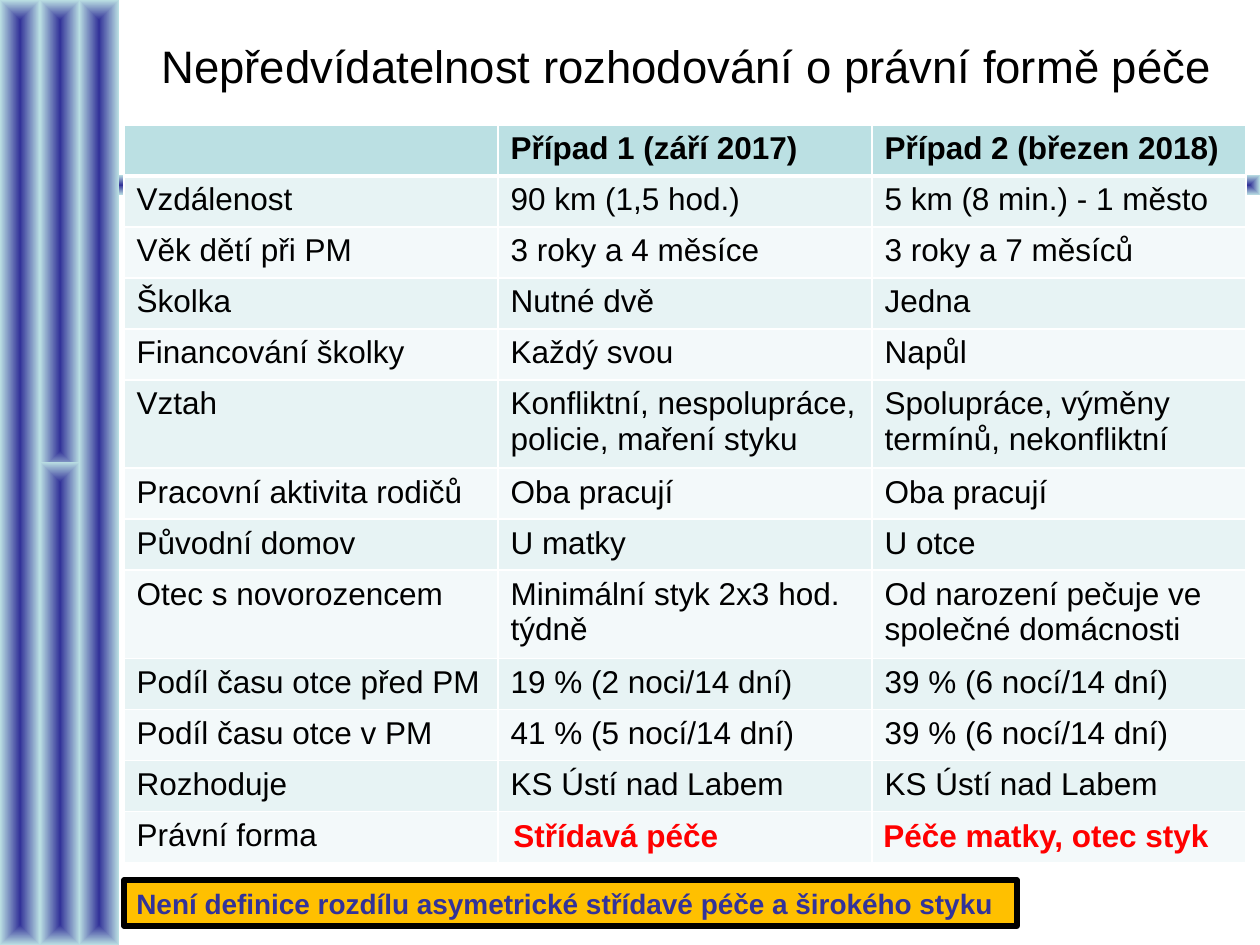
from typing import NamedTuple, Optional

from lxml.etree import SubElement
from pptx import Presentation
from pptx.dml.color import RGBColor
from pptx.enum.shapes import MSO_SHAPE as Shape
from pptx.enum.text import MSO_ANCHOR as Anchor, PP_ALIGN as Align
from pptx.oxml.ns import qn
from pptx.util import Emu, Pt

PX = 914400 / 126
FONT = "Arial"
BLACK, WHITE, RED = "000000", "FFFFFF", "FF0000"
NAVY, AQUA, AMBER = "333399", "BBE0E3", "FFC000"
BANDS = ("E7F3F4", "F3F9FA")


class Area(NamedTuple):
    left: int
    top: int
    width: int
    height: int


class Style(NamedTuple):
    size: int
    color: str = BLACK
    bold: bool = False
    align: Align = Align.LEFT


BARS = [
    Area(0, 175, 1260, 20),
    Area(0, 0, 40, 945),
    Area(79, 0, 40, 945),
    Area(40, 0, 40, 471),
    Area(40, 462, 40, 483),
]
TABLE = Area(124, 125, 1122, 663)
ROWS = [
    ("", "Případ 1 (září 2017)", "Případ 2 (březen 2018)"),
    ("Vzdálenost", "90 km (1,5 hod.)", "5 km (8 min.) - 1 město"),
    ("Věk dětí při PM", "3 roky a 4 měsíce", "3 roky a 7 měsíců"),
    ("Školka", "Nutné dvě", "Jedna"),
    ("Financování školky", "Každý svou", "Napůl"),
    ("Vztah", "Konfliktní, nespolupráce, policie, maření styku",
     "Spolupráce, výměny termínů, nekonfliktní"),
    ("Pracovní aktivita rodičů", "Oba pracují", "Oba pracují"),
    ("Původní domov", "U matky", "U otce"),
    ("Otec s novorozencem", "Minimální styk 2x3 hod. týdně",
     "Od narození pečuje ve společné domácnosti"),
    ("Podíl času otce před PM", "19 % (2 noci/14 dní)", "39 % (6 nocí/14 dní)"),
    ("Podíl času otce v PM", "41 % (5 nocí/14 dní)", "39 % (6 nocí/14 dní)"),
    ("Rozhoduje", "KS Ústí nad Labem", "KS Ústí nad Labem"),
    ("Právní forma", "", ""),
]


def px(length: int) -> Emu:
    return Emu(round(length * PX))


def rgb(color: str) -> RGBColor:
    return RGBColor.from_string(color)


def place(area: Area) -> list[Emu]:
    return [px(length) for length in area]


def write(frame, text: str, style: Style, tab: Optional[int] = None) -> None:
    frame.word_wrap = True
    para = frame.paragraphs[0]
    para.alignment = style.align
    if tab is not None:
        stops = SubElement(para._p.get_or_add_pPr(), qn("a:tabLst"))
        SubElement(stops, qn("a:tab"), pos=str(px(tab)), algn="l")
    span = para.add_run()
    span.text = text
    span.font.name = FONT
    span.font.size = Pt(style.size)
    span.font.bold = style.bold
    span.font.color.rgb = rgb(style.color)


def add_text(page, area: Area, text: str, style: Style,
             anchor: Anchor = Anchor.TOP, tab: Optional[int] = None) -> None:
    box = page.shapes.add_textbox(*place(area))
    box.text_frame.vertical_anchor = anchor
    write(box.text_frame, text, style, tab)


def add_bar(page, area: Area) -> None:
    bar = page.shapes.add_shape(Shape.RECTANGLE, *place(area))
    bar.shadow.inherit = False
    bar.line.fill.background()
    bar.fill.gradient()
    for stop, color in zip(bar.fill.gradient_stops, (NAVY, AQUA)):
        stop.color.rgb = rgb(color)
    # Replace the linear direction by one running out from the centre
    gradient = bar._element.spPr.find(qn("a:gradFill"))
    gradient.remove(gradient.find(qn("a:lin")))
    centre = SubElement(gradient, qn("a:path"), path="shape")
    SubElement(centre, qn("a:fillToRect"),
               {side: "50000" for side in "ltrb"})


def add_border(cell, side: str, points: int) -> None:
    line = SubElement(cell._tc.get_or_add_tcPr(), qn(f"a:ln{side}"),
                      w=str(Pt(points)))
    SubElement(SubElement(line, qn("a:solidFill")), qn("a:srgbClr"), val=WHITE)


def add_case_table(page) -> None:
    table = page.shapes.add_table(len(ROWS), len(ROWS[0]), *place(TABLE)).table
    for column in table.columns:
        column.width = px(TABLE.width // len(ROWS[0]))
    for index, texts in enumerate(ROWS):
        header = index == 0
        table.rows[index].height = px(TABLE.height // len(ROWS))
        for number, text in enumerate(texts):
            cell = table.cell(index, number)
            for side in "LRTB":
                thick = (header and side == "B") or (index == 1 and side == "T")
                add_border(cell, side, 3 if thick else 1)
            cell.fill.solid()
            cell.fill.fore_color.rgb = rgb(AQUA if header else BANDS[(index - 1) % 2])
            if text:
                write(cell.text_frame, text, Style(18, bold=header))


def add_banner(page, area: Area, text: str, style: Style) -> None:
    banner = page.shapes.add_shape(Shape.RECTANGLE, *place(area))
    banner.shadow.inherit = False
    banner.fill.solid()
    banner.fill.fore_color.rgb = rgb(AMBER)
    banner.line.color.rgb = rgb(BLACK)
    banner.line.width = Pt(3)
    banner.text_frame.vertical_anchor = Anchor.TOP
    write(banner.text_frame, text, style)


def main() -> None:
    deck = Presentation()
    deck.slide_width, deck.slide_height = px(1260), px(945)
    page = deck.slides.add_slide(deck.slide_layouts[6])

    # Decorative bars
    for area in BARS:
        add_bar(page, area)

    # Title and comparison
    add_text(page, Area(124, 6, 1126, 119),
             "Nepředvídatelnost rozhodování o právní formě péče",
             Style(26, align=Align.CENTER), Anchor.MIDDLE)
    add_case_table(page)

    # Outcomes and conclusion
    add_text(page, Area(501, 810, 749, 50),
             "Střídavá péče\tPéče matky, otec styk",
             Style(18, RED, True), tab=370)
    add_banner(page, Area(124, 880, 893, 46),
               "Není definice rozdílu asymetrické střídavé péče a širokého styku",
               Style(16, NAVY, True, Align.JUSTIFY))

    deck.save("out.pptx")


if __name__ == "__main__":
    main()
